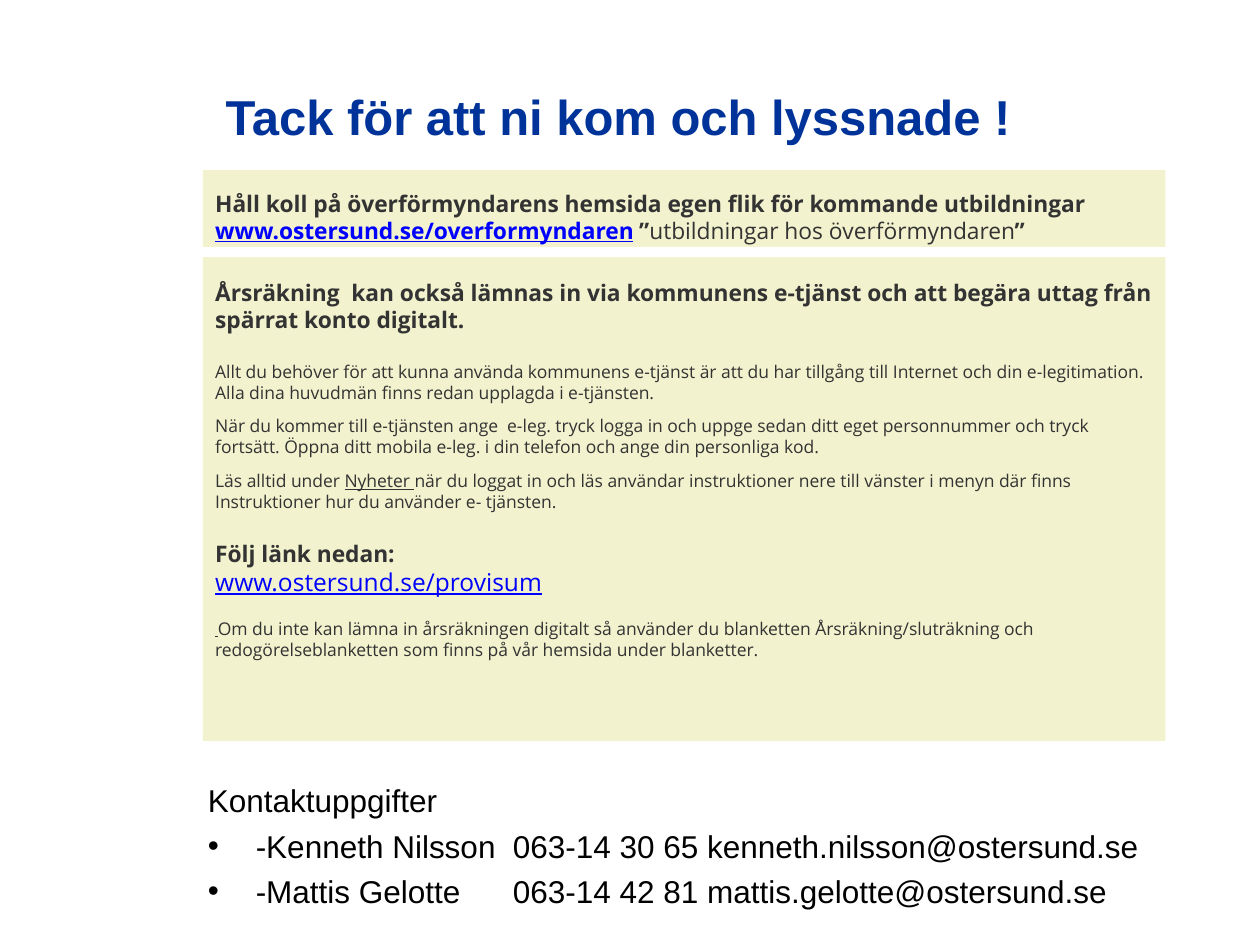
from pptx import Presentation
from pptx.dml.color import RGBColor
from pptx.enum.shapes import MSO_SHAPE
from pptx.enum.text import MSO_ANCHOR, MSO_AUTO_SIZE, PP_ALIGN
from pptx.oxml import parse_xml
from pptx.oxml.ns import nsdecls
from pptx.util import Inches, Pt

RECTANGLE = MSO_SHAPE.RECTANGLE
TOP, MIDDLE = MSO_ANCHOR.TOP, MSO_ANCHOR.MIDDLE
LEFT = PP_ALIGN.LEFT
NO_FIT = MSO_AUTO_SIZE.NONE

NAVY, BLACK, GREY, BLUE, CREAM = "003399", "000000", "333333", "0000FF", "F2F2CE"
SANS, OPEN = "Arial", "Open Sans"

TITLE = "Tack för att ni kom och lyssnade !"

# Paragraph: (space before, size, runs); run: (text, style letters)
# b = bold, u = underlined, l = link blue, s = small
NEWS = [
    (0, 13, [("Håll koll på överförmyndarens hemsida egen flik för kommande utbildningar", "b")]),
    (0, 13, [("www.ostersund.se/overformyndaren", "bul"), (" ”", "b"),
             ("utbildningar hos överförmyndaren", ""), ("”", "b")]),
]
E_SERVICE = [
    (0, 13, [("Årsräkning  kan också lämnas in via kommunens e-tjänst och att begära "
              "uttag från spärrat konto digitalt.", "b")]),
    (16, 10, [("Allt du behöver för att kunna använda kommunens e-tjänst är att du har tillgång "
               "till Internet och din e-legitimation. Alla dina huvudmän finns redan upplagda i "
               "e-tjänsten.", "")]),
    (7, 10, [("När du kommer till e-tjänsten ange  e-leg. tryck logga in och uppge sedan ditt "
              "eget personnummer och tryck fortsätt. Öppna ditt mobila e-leg. i din telefon "
              "och ange din personliga kod.", "")]),
    (7, 10, [("Läs alltid under ", ""), ("Nyheter ", "u"),
             ("när du loggat in och läs användar instruktioner nere till vänster i menyn "
              "där finns", "")]),
    (0, 10, [("Instruktioner hur du använder e- tjänsten.", "")]),
    (16, 13, [("Följ länk nedan:", "b")]),
    (0, 14, [("www.ostersund.se/provisum", "ul")]),
    (12, 10, [(" ", "us"),
              ("Om du inte kan lämna in årsräkningen digitalt så använder du blanketten "
               "Årsräkning/sluträkning och redogörelseblanketten som finns på vår hemsida "
               "under blanketter.", "")]),
]
CONTACT_HEADING = "Kontaktuppgifter"
CONTACTS = [
    ("-Kenneth Nilsson", "063-14 30 65 kenneth.nilsson@ostersund.se"),
    ("-Mattis Gelotte", "063-14 42 81 mattis.gelotte@ostersund.se"),
]
PANEL_LEFT, PANEL_WIDTH = 1.61, 7.64
PANELS = [  # top, height, top inset, anchor, paragraphs
    (1.35, 0.61, 0.14, MIDDLE, NEWS),
    (2.04, 3.84, 0.17, TOP, E_SERVICE),
]
CONTACT_INDENT, PHONE_TAB = 0.38, 2.42


def rgb(value):
    return RGBColor.from_string(value)


def add_run(paragraph, text, font, size, color, bold=False, underline=False):
    run = paragraph.add_run()
    run.text = text
    run.font.name, run.font.size = font, Pt(size)
    run.font.bold, run.font.underline = bold, underline
    run.font.color.rgb = rgb(color)


def place(shape, left, top, width, height):
    shape.left, shape.top = Inches(left), Inches(top)
    shape.width, shape.height = Inches(width), Inches(height)


def next_paragraph(frame, index):
    return frame.add_paragraph() if index else frame.paragraphs[0]


def add_panel(slide, top, height, inset, anchor, paragraphs):
    panel = slide.shapes.add_shape(RECTANGLE, Inches(PANEL_LEFT), Inches(top),
                                   Inches(PANEL_WIDTH), Inches(height))
    panel.shadow.inherit = False
    panel.fill.solid()
    panel.fill.fore_color.rgb = rgb(CREAM)
    panel.line.fill.background()
    frame = panel.text_frame
    frame.word_wrap, frame.vertical_anchor = True, anchor
    frame.margin_top, frame.margin_bottom = Inches(inset), Inches(0.01)
    for index, (before, size, runs) in enumerate(paragraphs):
        paragraph = next_paragraph(frame, index)
        paragraph.alignment, paragraph.space_before = LEFT, Pt(before)
        for text, style in runs:
            add_run(paragraph, text, OPEN, 6 if "s" in style else size,
                    BLUE if "l" in style else GREY, "b" in style, "u" in style)


def set_list_format(paragraph, bulleted):
    """Set the hanging indent, bullet and phone tab, or none of them."""
    properties = paragraph._p.get_or_add_pPr()
    indent = Inches(CONTACT_INDENT) if bulleted else 0
    properties.set("marL", str(indent))
    properties.set("indent", str(-indent))
    if bulleted:
        properties.append(parse_xml(f'<a:buChar {nsdecls("a")} char="•"/>'))
        properties.append(parse_xml(f'<a:tabLst {nsdecls("a")}><a:tab '
                                    f'pos="{Inches(PHONE_TAB)}" algn="l"/></a:tabLst>'))
    else:
        properties.append(parse_xml(f'<a:buNone {nsdecls("a")}/>'))


def main():
    deck = Presentation()
    deck.slide_width, deck.slide_height = Inches(10), Inches(7.5)
    slide = deck.slides.add_slide(deck.slide_layouts[1])

    title = slide.shapes.title
    place(title, 1.69, 0.6, 7.17, 0.79)
    title.text_frame.vertical_anchor = TOP
    title.text_frame.margin_top = Inches(0.09)
    title.text_frame.auto_size = NO_FIT
    heading = title.text_frame.paragraphs[0]
    heading.alignment = LEFT
    add_run(heading, TITLE, SANS, 28, NAVY, bold=True)

    contacts = slide.placeholders[1]
    place(contacts, 1.55, 6.15, 8.45, 1.1)
    contacts.text_frame.auto_size = NO_FIT
    lines = [CONTACT_HEADING] + ["\t".join(contact) for contact in CONTACTS]
    for index, line in enumerate(lines):
        paragraph = next_paragraph(contacts.text_frame, index)
        set_list_format(paragraph, bulleted=index > 0)
        paragraph.space_before = Pt(4.4 if index else 0)
        add_run(paragraph, line, SANS, 18, BLACK)

    for panel in PANELS:
        add_panel(slide, *panel)
    deck.save("out.pptx")


if __name__ == "__main__":
    main()
